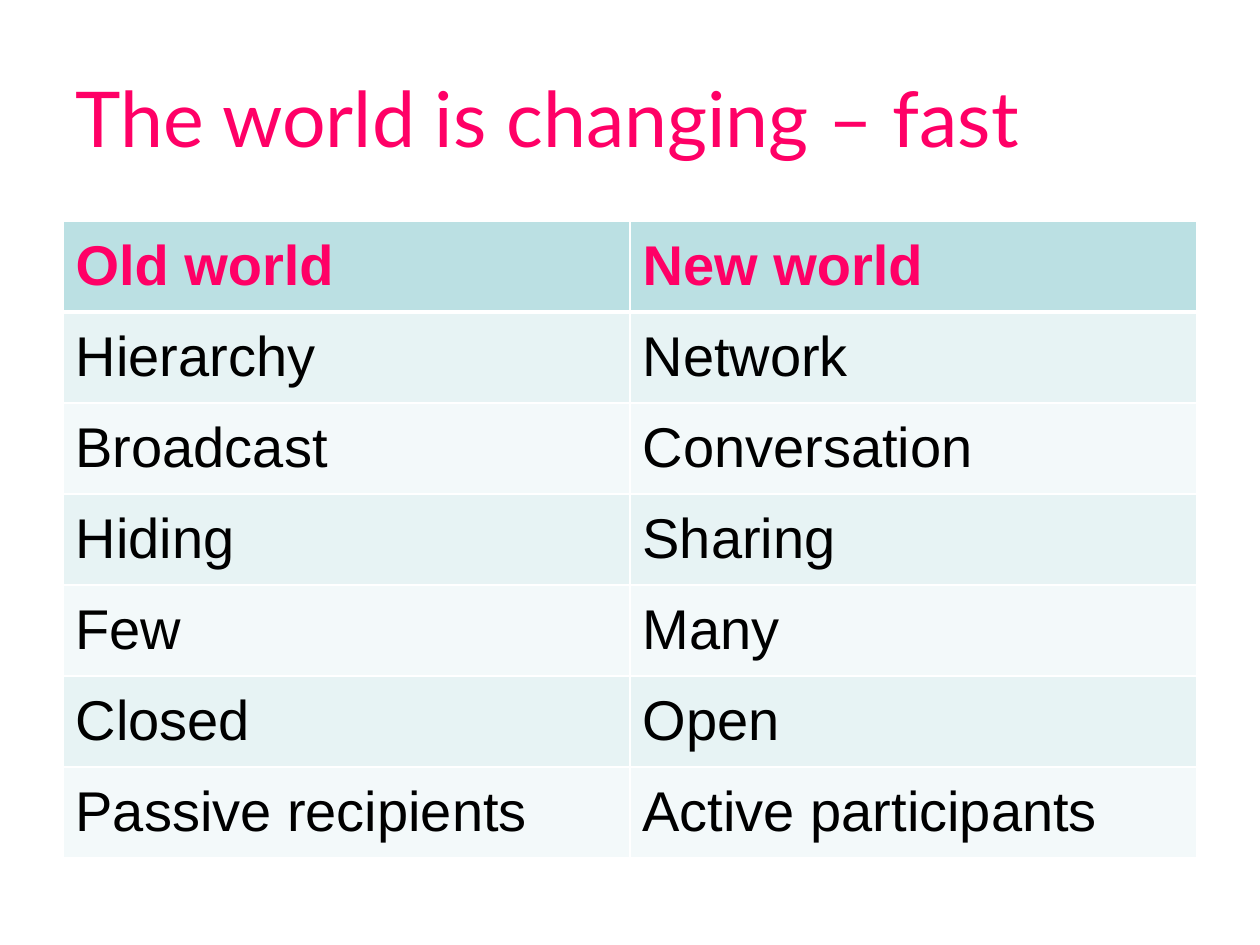
from lxml import etree
from pptx import Presentation
from pptx.dml.color import RGBColor
from pptx.enum.text import MSO_ANCHOR as Anchor, PP_ALIGN as Align
from pptx.oxml.ns import qn
from pptx.util import Emu, Pt

EMU_PER_PX = 914400 / 126
PINK, BLACK, WHITE = "FF0066", "000000", "FFFFFF"
HEADER_FILL, BAND_FILLS = "BBE0E3", ("E7F3F4", "F3F9FA")
ROWS = [
    ("Old world", "New world"),
    ("Hierarchy", "Network"),
    ("Broadcast", "Conversation"),
    ("Hiding", "Sharing"),
    ("Few", "Many"),
    ("Closed", "Open"),
    ("Passive recipients", "Active participants"),
]


def px(length):
    return Emu(round(length * EMU_PER_PX))


def color(hex_string):
    return RGBColor.from_string(hex_string)


class SlideBuilder:
    """Holds the text styles and the current slide."""

    styles = {
        "title": {"name": "Lato", "size": Pt(44), "bold": False, "color": PINK},
        "header": {"name": "Arial", "size": Pt(32), "bold": True, "color": PINK},
        "body": {"name": "Arial", "size": Pt(32), "bold": False, "color": BLACK},
    }

    def __init__(self, slide):
        self.slide = slide

    def add_text(self, text_frame, text, style):
        paragraph = text_frame.paragraphs[0]
        paragraph.alignment = Align.LEFT
        run = paragraph.add_run()
        run.text = text
        for key, value in self.styles[style].items():
            if key == "color":
                run.font.color.rgb = color(value)
            else:
                setattr(run.font, key, value)

    def title(self, text, left, top, width, height):
        shape = self.slide.shapes.title
        box = {"left": left, "top": top, "width": width, "height": height}
        for key, value in box.items():
            setattr(shape, key, px(value))
        shape.text_frame.vertical_anchor = Anchor.MIDDLE
        self.add_text(shape.text_frame, text, "title")

    def borders(self, cell, widths):
        properties = cell._tc.get_or_add_tcPr()
        for index, (side, points) in enumerate(widths.items()):
            line = etree.Element(qn(f"a:ln{side}"), w=str(Pt(points)))
            fill = etree.SubElement(line, qn("a:solidFill"))
            etree.SubElement(fill, qn("a:srgbClr"), val=WHITE)
            properties.insert(index, line)

    def table(self, rows, left, top, width, row_height):
        frame = self.slide.shapes.add_table(
            len(rows), len(rows[0]), px(left), px(top), px(width), px(row_height * len(rows)))
        for row_index, texts in enumerate(rows):
            is_header = row_index == 0
            fill = HEADER_FILL if is_header else BAND_FILLS[(row_index - 1) % 2]
            for column_index, text in enumerate(texts):
                cell = frame.table.cell(row_index, column_index)
                cell.vertical_anchor = Anchor.MIDDLE
                cell.fill.solid()
                cell.fill.fore_color.rgb = color(fill)
                # The rule under the header is thicker than the others
                self.borders(cell, {"L": 1, "R": 1, "T": 3 if row_index == 1 else 1,
                                    "B": 3 if is_header else 1})
                self.add_text(cell.text_frame, text, "header" if is_header else "body")


def main():
    presentation = Presentation()
    presentation.slide_width, presentation.slide_height = px(1260), px(945)
    title_only = presentation.slide_layouts[5]
    builder = SlideBuilder(presentation.slides.add_slide(title_only))

    # Heading
    builder.title("The world is changing – fast", 63, 38, 1134, 158)

    # Comparison of old and new
    builder.table(ROWS, 63, 221, 1134, 91)

    presentation.save("out.pptx")


if __name__ == "__main__":
    main()
